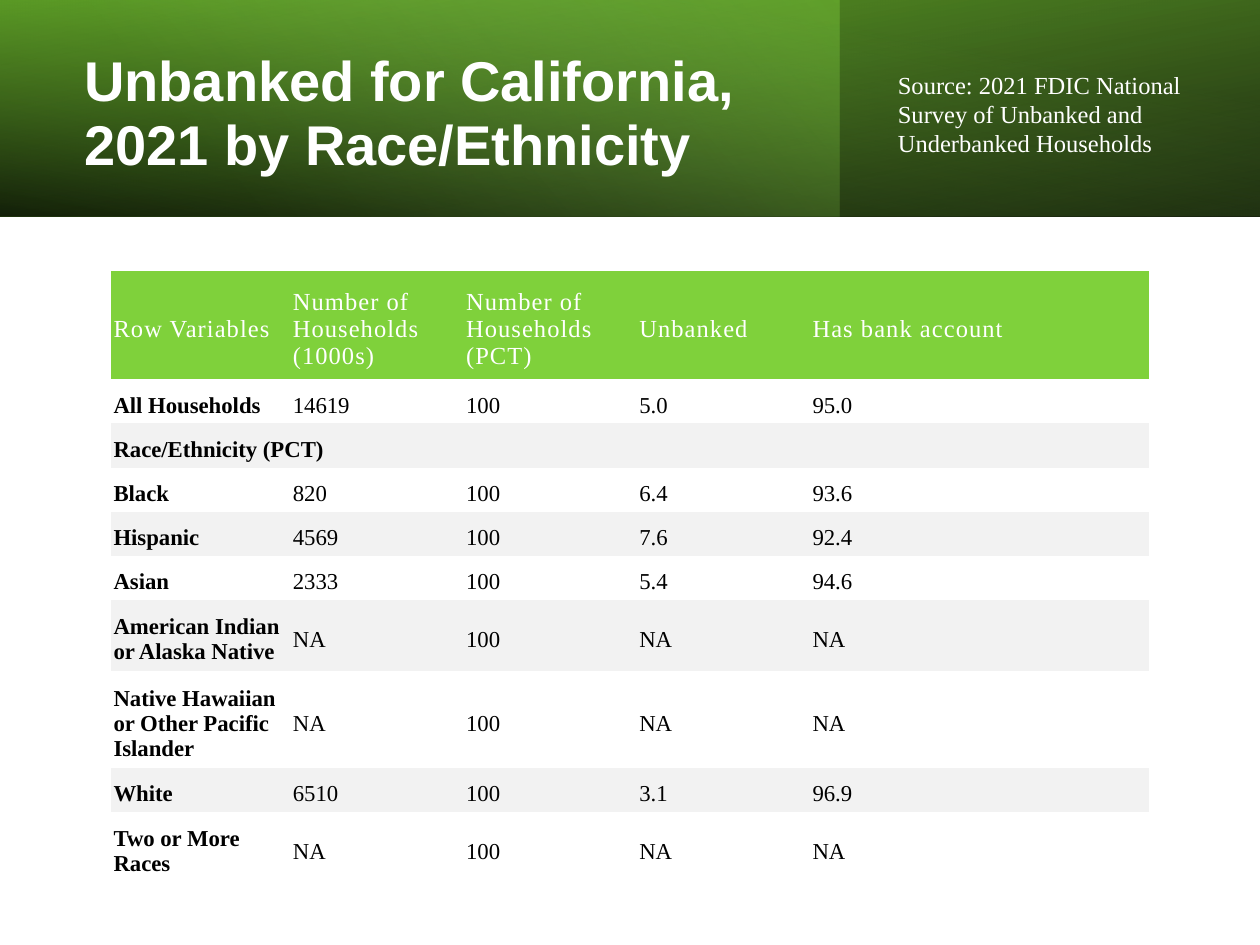
from dataclasses import dataclass

import pptx
import pptx.dml.color
import pptx.enum.shapes
import pptx.enum.text
import pptx.oxml
import pptx.oxml.ns
import pptx.util

Pt = pptx.util.Pt
MIDDLE = pptx.enum.text.MSO_ANCHOR.MIDDLE


@dataclass(frozen=True)
class Theme:
    title_font: str = "Arial"
    body_font: str = "Times New Roman"
    title_size: float = 32
    head_size: float = 14
    cell_size: float = 13
    white: str = "FFFFFF"
    black: str = "000000"
    green: str = "7FD13B"
    deep_green: str = "5FA326"
    pale_green: str = "B2E389"
    band: str = "F2F2F2"


@dataclass(frozen=True)
class Stop:
    pos: int
    color: str
    alpha: int = 100


@dataclass(frozen=True)
class Panel:
    width: float
    angle: int
    stops: tuple[Stop, ...]
    rotation: int = 0
    flipped: bool = False


@dataclass(frozen=True)
class Style:
    font: str
    size: float
    color: str
    bold: bool = False
    tracking: int = 0  # hundredths of a point


@dataclass(frozen=True)
class TextBlock:
    text: str
    box: tuple[float, float, float, float]
    style: Style
    line_spacing: float
    space_before: float = 0


T = Theme()
HEAD = Style(T.body_font, T.head_size, T.white, tracking=60)
LABEL = Style(T.body_font, T.cell_size, T.black, bold=True)
VALUE = Style(T.body_font, T.cell_size, T.black)

# Header band: three layered gradients
BAND_HEIGHT = 124
PANELS = (
    Panel(720, 100, (Stop(0, T.black, 96), Stop(100, T.deep_green)), rotation=180, flipped=True),
    Panel(480, 140, (Stop(0, T.green, 41), Stop(74, T.pale_green, 0))),
    Panel(720, 260, (Stop(0, T.black, 63), Stop(78, T.green, 15)), flipped=True),
)

TEXTS = (
    TextBlock("Unbanked for California, 2021 by Race/Ethnicity", (41, 19.5, 417, 91.5),
              Style(T.title_font, T.title_size, T.white, bold=True), 0.95),
    TextBlock("Source: 2021 FDIC National Survey of Unbanked and Underbanked Households",
              (506, 31, 191, 69), Style(T.body_font, T.head_size, T.white), 0.98, 10),
)

# Table content and measures
ROWS = (
    ("Row Variables", "Number of Households (1000s)", "Number of Households (PCT)",
     "Unbanked", "Has bank account"),
    ("All Households", "14619", "100", "5.0", "95.0"),
    ("Race/Ethnicity (PCT)",),
    ("Black", "820", "100", "6.4", "93.6"),
    ("Hispanic", "4569", "100", "7.6", "92.4"),
    ("Asian", "2333", "100", "5.4", "94.6"),
    ("American Indian or Alaska Native", "NA", "100", "NA", "NA"),
    ("Native Hawaiian or Other Pacific Islander", "NA", "100", "NA", "NA"),
    ("White", "6510", "100", "3.1", "96.9"),
    ("Two or More Races", "NA", "100", "NA", "NA"),
)
TABLE_LEFT, TABLE_TOP = 63.4, 154.8
COL_WIDTHS = (102.5, 99, 99, 99, 193.5)
ROW_HEIGHT = 25.2
TALL_ROWS = {0: 62, 6: 40.5, 7: 55.5, 9: 40.5}
NO_GRID_STYLE = "{2D5ABB26-0587-4C30-8999-92F81FD0307C}"


def rgb(color: str) -> pptx.dml.color.RGBColor:
    return pptx.dml.color.RGBColor.from_string(color)


def add_run(p, text: str, style: Style) -> None:
    r = p.add_run()
    r.text = text
    r.font.name = style.font
    r.font.size = Pt(style.size)
    r.font.bold = style.bold
    r.font.color.rgb = rgb(style.color)
    if style.tracking:
        r.font._element.set("spc", str(style.tracking))


def add_panel(s, panel: Panel) -> None:
    sp = s.shapes.add_shape(pptx.enum.shapes.MSO_SHAPE.RECTANGLE,
                            Pt(0), Pt(0), Pt(panel.width), Pt(BAND_HEIGHT))
    sp.shadow.inherit = False
    sp.line.fill.background()
    sp.rotation = panel.rotation
    sp_pr = sp._element.spPr
    if panel.flipped:
        sp_pr.xfrm.set("flipH", "1")
    # Stops with transparency
    stops = "".join(
        f'<a:gs pos="{st.pos * 1000}"><a:srgbClr val="{st.color}">'
        f'<a:alpha val="{st.alpha * 1000}"/></a:srgbClr></a:gs>'
        for st in panel.stops)
    gradient = pptx.oxml.parse_xml(
        f'<a:gradFill {pptx.oxml.ns.nsdecls("a")} rotWithShape="1"><a:gsLst>{stops}</a:gsLst>'
        f'<a:lin ang="{panel.angle * 60000}" scaled="0"/></a:gradFill>')
    sp.fill.background()
    sp_pr.replace(sp_pr.find(pptx.oxml.ns.qn("a:noFill")), gradient)


def add_text(s, block: TextBlock) -> None:
    sp = s.shapes.add_textbox(*(Pt(v) for v in block.box))
    tf = sp.text_frame
    tf.word_wrap = True
    tf.vertical_anchor = MIDDLE
    p = tf.paragraphs[0]
    p.line_spacing = block.line_spacing
    p.space_before = Pt(block.space_before)
    add_run(p, block.text, block.style)


def fill_cell(cell, text: str, style: Style, fill: str | None) -> None:
    cell.margin_left = cell.margin_right = cell.margin_bottom = Pt(1.5)
    cell.margin_top = Pt(6.5)
    cell.vertical_anchor = MIDDLE
    if fill:
        cell.fill.solid()
        cell.fill.fore_color.rgb = rgb(fill)
    else:
        cell.fill.background()
    if text:
        add_run(cell.text_frame.paragraphs[0], text, style)


def add_household_table(s) -> None:
    heights = [TALL_ROWS.get(i, ROW_HEIGHT) for i in range(len(ROWS))]
    frame = s.shapes.add_table(len(ROWS), len(COL_WIDTHS), Pt(TABLE_LEFT), Pt(TABLE_TOP),
                               Pt(sum(COL_WIDTHS)), Pt(sum(heights)))
    table = frame.table
    table.first_row = table.horz_banding = False
    table._tbl.tblPr.find(pptx.oxml.ns.qn("a:tableStyleId")).text = NO_GRID_STYLE
    for col, width in zip(table.columns, COL_WIDTHS):
        col.width = Pt(width)
    for i, (values, height) in enumerate(zip(ROWS, heights)):
        table.rows[i].height = Pt(height)
        fill = T.green if i == 0 else T.band if i % 2 == 0 else None
        for j in range(len(COL_WIDTHS)):
            style = HEAD if i == 0 else LABEL if j == 0 else VALUE
            fill_cell(table.cell(i, j), values[j] if j < len(values) else "", style, fill)
        if len(values) == 1:
            table.cell(i, 0).merge(table.cell(i, len(COL_WIDTHS) - 1))


def main() -> None:
    prs = pptx.Presentation()
    prs.slide_width, prs.slide_height = Pt(720), Pt(540)
    s = prs.slides.add_slide(prs.slide_layouts[6])
    for panel in PANELS:
        add_panel(s, panel)
    for block in TEXTS:
        add_text(s, block)
    add_household_table(s)
    prs.save("out.pptx")


if __name__ == "__main__":
    main()
